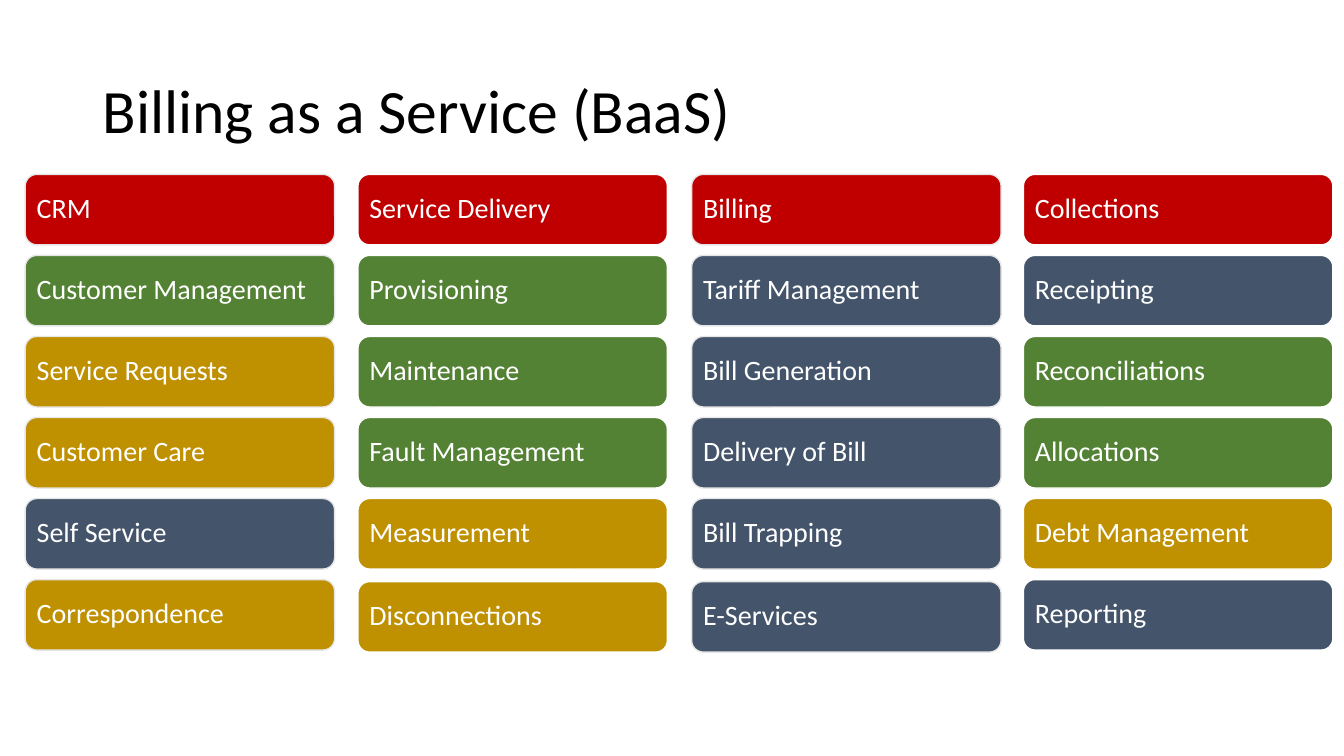
from dataclasses import dataclass

from pptx import Presentation
from pptx.dml.color import RGBColor
from pptx.enum.shapes import MSO_SHAPE
from pptx.enum.text import MSO_ANCHOR, PP_ALIGN
from pptx.slide import Slide
from pptx.text.text import TextFrame
from pptx.util import Inches, Pt

ROUNDED = MSO_SHAPE.ROUNDED_RECTANGLE
MIDDLE = MSO_ANCHOR.MIDDLE
LEFT = PP_ALIGN.LEFT

COLORS = {
    "red": "C00000",
    "green": "548235",
    "gold": "BF9000",
    "slate": "44546A",
    "gray": "E7E6E6",
    "white": "FFFFFF",
    "black": "000000",
}
FONT = "Calibri"
CARD_WIDTH, CARD_HEIGHT = 3.07, 0.7
FIRST_TOP, LAST_TOP = 1.73, 5.75
CARD_MARGINS = dict.fromkeys(
    ("margin_left", "margin_top", "margin_right", "margin_bottom"), Inches(0.08))


@dataclass
class Card:
    label: str
    color: str


@dataclass
class Column:
    left: float
    outline: str
    cards: list[Card]
    last_shift: float = 0


COLUMNS = [
    Column(0.25, "gray", [
        Card("CRM", "red"),
        Card("Customer Management", "green"),
        Card("Service Requests", "gold"),
        Card("Customer Care", "gold"),
        Card("Self Service", "slate"),
        Card("Correspondence", "gold"),
    ]),
    Column(3.55, "white", [
        Card("Service Delivery", "red"),
        Card("Provisioning", "green"),
        Card("Maintenance", "green"),
        Card("Fault Management", "green"),
        Card("Measurement", "gold"),
        Card("Disconnections", "gold"),
    ], last_shift=0.02),
    Column(6.86, "gray", [
        Card("Billing", "red"),
        Card("Tariff Management", "slate"),
        Card("Bill Generation", "slate"),
        Card("Delivery of Bill", "slate"),
        Card("Bill Trapping", "slate"),
        Card("E-Services", "slate"),
    ], last_shift=0.02),
    Column(10.15, "white", [
        Card("Collections", "red"),
        Card("Receipting", "slate"),
        Card("Reconciliations", "green"),
        Card("Allocations", "green"),
        Card("Debt Management", "gold"),
        Card("Reporting", "slate"),
    ]),
]


def rgb(name: str) -> RGBColor:
    return RGBColor.from_string(COLORS[name])


def write_text(frame: TextFrame, text: str, size: int, color: str) -> None:
    frame.word_wrap = True
    frame.vertical_anchor = MIDDLE
    paragraph = frame.paragraphs[0]
    paragraph.text = text
    paragraph.alignment = LEFT
    paragraph.line_spacing = 0.9
    for name, value in {"name": FONT, "size": Pt(size)}.items():
        setattr(paragraph.font, name, value)
    paragraph.font.color.rgb = rgb(color)


def add_title(slide: Slide, text: str) -> None:
    box = slide.shapes.add_textbox(Inches(0.92), Inches(0.4), Inches(11.5), Inches(1.45))
    write_text(box.text_frame, text, 44, "black")


def add_card(slide: Slide, card: Card, left: float, top: float, outline: str) -> None:
    shape = slide.shapes.add_shape(
        ROUNDED, Inches(left), Inches(top), Inches(CARD_WIDTH), Inches(CARD_HEIGHT))
    shape.shadow.inherit = False
    shape.fill.solid()
    shape.fill.fore_color.rgb = rgb(card.color)
    shape.line.color.rgb = rgb(outline)
    shape.line.width = Pt(1)
    for name, value in CARD_MARGINS.items():
        setattr(shape.text_frame, name, value)
    write_text(shape.text_frame, card.label, 20, "white")


def add_column(slide: Slide, column: Column) -> None:
    """Spread the cards evenly, nudging the last one by the column's shift."""
    last = len(column.cards) - 1
    pitch = (LAST_TOP - FIRST_TOP) / last
    for row, card in enumerate(column.cards):
        shift = column.last_shift if row == last else 0
        add_card(slide, card, column.left, FIRST_TOP + row * pitch + shift, column.outline)


def main() -> None:
    presentation = Presentation()
    presentation.slide_width = Inches(13.33)
    presentation.slide_height = Inches(7.5)
    slide = presentation.slides.add_slide(presentation.slide_layouts[6])
    add_title(slide, "Billing as a Service (BaaS)")
    for column in COLUMNS:
        add_column(slide, column)
    presentation.save("out.pptx")


if __name__ == "__main__":
    main()
